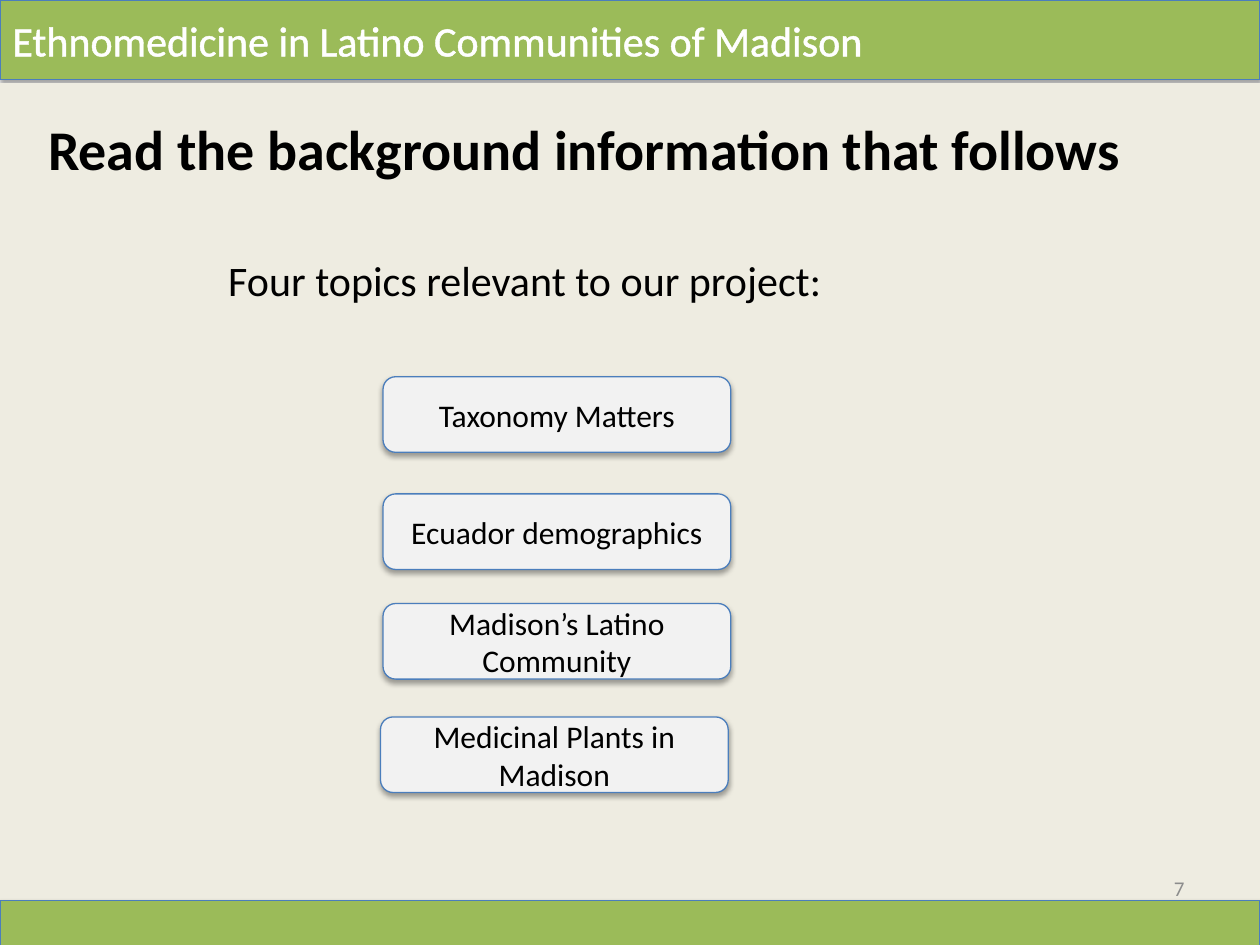
"""Build the background-reading slide of the ethnomedicine project."""
from lxml.etree import SubElement
from pptx import Presentation
from pptx.dml.color import RGBColor
from pptx.enum.shapes import MSO_SHAPE
from pptx.enum.text import MSO_ANCHOR, PP_ALIGN
from pptx.oxml import parse_xml
from pptx.oxml.ns import nsdecls, qn
from pptx.util import Inches, Pt

GREEN = RGBColor(0x9B, 0xBB, 0x59)
BLUE = RGBColor(0x4B, 0x7E, 0xBC)
CREAM = RGBColor(0xEE, 0xEC, 0xE1)
PALE = RGBColor(0xF2, 0xF2, 0xF2)
BLACK = RGBColor(0, 0, 0)
WHITE = RGBColor(0xFF, 0xFF, 0xFF)
GREY = RGBColor(0x8C, 0x8C, 0x8C)


class SlideBuilder:
    def __init__(self, slide, font="Calibri"):
        self.slide = slide
        self.font = font

    def add_text(self, shape, text, size, color, align=PP_ALIGN.CENTER,
                 anchor=MSO_ANCHOR.MIDDLE, bold=False):
        frame = shape.text_frame
        for name, value in {"word_wrap": True, "vertical_anchor": anchor}.items():
            setattr(frame, name, value)
        paragraph = frame.paragraphs[0]
        paragraph.alignment = align
        run = paragraph.add_run()
        run.text = text
        formats = {"name": self.font, "size": Pt(size), "bold": bold}
        for name, value in formats.items():
            setattr(run.font, name, value)
        run.font.color.rgb = color
        return run

    def panel(self, place, fill, kind=MSO_SHAPE.RECTANGLE):
        panel = self.slide.shapes.add_shape(kind, *map(Inches, place))
        panel.shadow.inherit = False
        panel.fill.solid()
        panel.fill.fore_color.rgb = fill
        panel.line.fill.background()
        return panel

    def raised(self, place, fill, kind=MSO_SHAPE.RECTANGLE):
        panel = self.panel(place, fill, kind)
        panel.line.color.rgb = BLUE
        panel.line.width = Pt(0.75)
        effects = panel._element.spPr.find(qn("a:effectLst"))
        shadow = SubElement(effects, qn("a:outerShdw"), blurRad=str(Pt(3.1)),
                            dist=str(Pt(1.8)), dir="5400000", rotWithShape="0")
        shade = SubElement(shadow, qn("a:srgbClr"), val="000000")
        SubElement(shade, qn("a:alpha"), val="35000")
        return panel

    def label(self, place, text, size, color, **layout):
        box = self.slide.shapes.add_textbox(*map(Inches, place))
        return self.add_text(box, text, size, color, **layout)

    def outline(self, run, color, width):
        line = parse_xml(
            f'<a:ln {nsdecls("a")} w="{Pt(width)}"><a:solidFill>'
            f'<a:srgbClr val="{color}"/></a:solidFill></a:ln>')
        run._r.get_or_add_rPr().insert(0, line)


def main():
    deck = Presentation()
    deck.slide_width, deck.slide_height = Inches(10), Inches(7.5)
    builder = SlideBuilder(deck.slides.add_slide(deck.slide_layouts[6]))

    header = builder.raised((0, 0, 10, 0.63), GREEN)
    project = builder.add_text(header, "Ethnomedicine in Latino Communities of Madison",
                               24, WHITE, align=PP_ALIGN.LEFT)
    builder.outline(project, WHITE, 1.45)
    builder.panel((0, 0.66, 10, 6.79), CREAM)
    builder.raised((0, 7.15, 10, 0.36), GREEN)

    builder.label((0.14, 0.86, 9, 0.64), "Read the background information that follows",
                  32, BLACK, anchor=MSO_ANCHOR.TOP, bold=True)
    builder.label((0.14, 1.97, 8.05, 0.5), "Four topics relevant to our project:",
                  24, BLACK, anchor=MSO_ANCHOR.TOP)

    topics = [
        ("Taxonomy Matters", 3.04, 2.99),
        ("Ecuador demographics", 3.04, 3.92),
        ("Madison’s Latino Community", 3.04, 4.79),
        ("Medicinal Plants in Madison", 3.02, 5.69),
    ]
    for topic, left, top in topics:
        button = builder.raised((left, top, 2.76, 0.6), PALE, MSO_SHAPE.ROUNDED_RECTANGLE)
        builder.add_text(button, topic, 18, BLACK)

    builder.label((7.17, 6.85, 2.33, 0.4), "7", 12, GREY, align=PP_ALIGN.RIGHT)
    deck.save("out.pptx")


if __name__ == "__main__":
    main()
